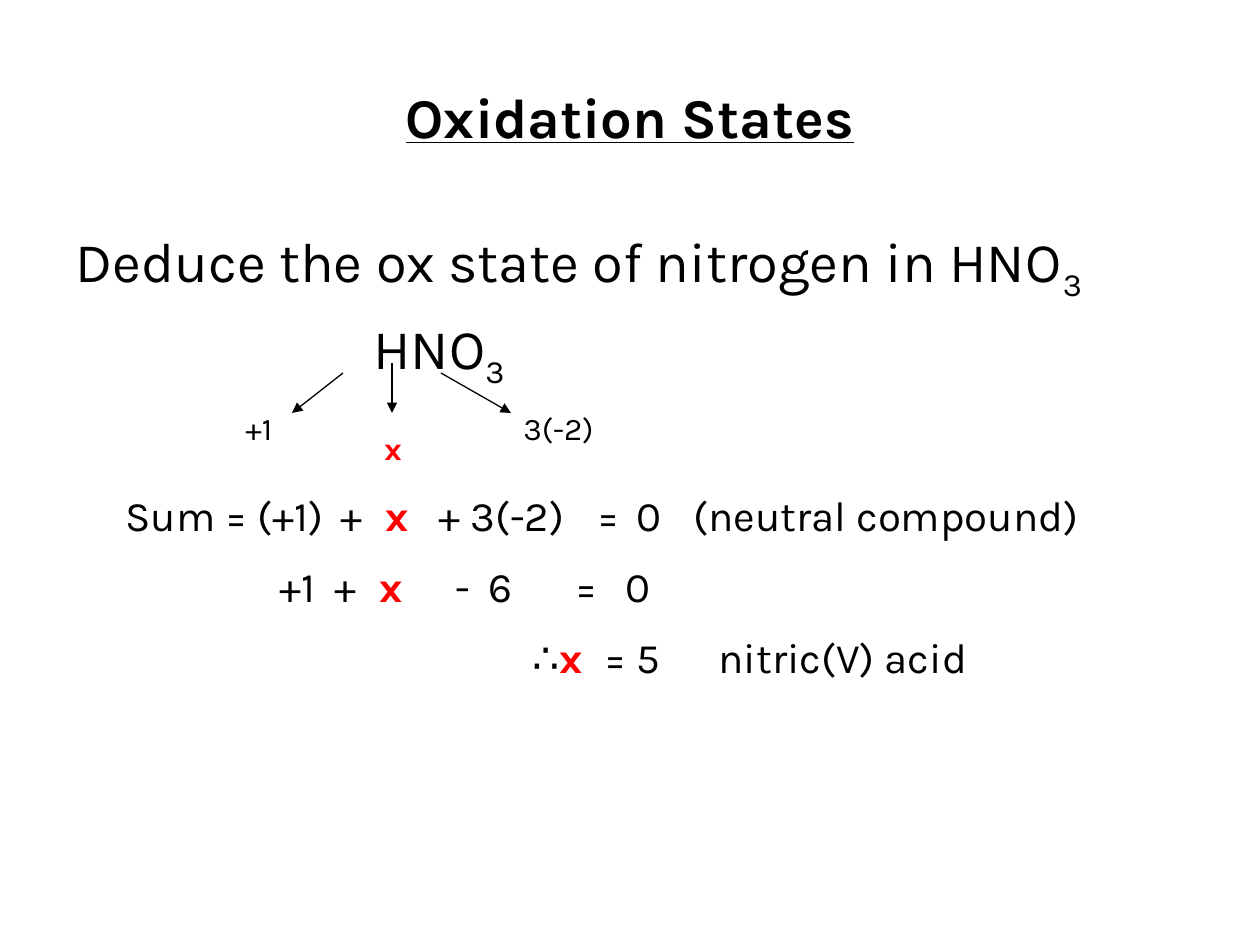
"""Build a slide that works out the oxidation state of nitrogen in nitric acid."""
from dataclasses import dataclass

from lxml import etree
from pptx import Presentation
from pptx import util as u
from pptx.dml.color import RGBColor
from pptx.enum import shapes, text
from pptx.oxml import ns

PX = u.Inches(1) // 126


@dataclass(frozen=True)
class Theme:
    """Colours, font and type sizes of the slide."""

    font: str = "Karla"
    ink: RGBColor = RGBColor(0, 0, 0)
    unknown: RGBColor = RGBColor(255, 0, 0)
    heading: int = 32
    working: int = 24
    label: int = 18


THEME = Theme()


def add_box(page, left, top, width, height, grow=True):
    """Add an empty wrapping text box and return its text frame."""
    box = page.shapes.add_textbox(left * PX, top * PX, width * PX, height * PX)
    frame = box.text_frame
    frame.word_wrap = True
    if grow:
        frame.auto_size = text.MSO_AUTO_SIZE.SHAPE_TO_FIT_TEXT
    return frame


def set_tabs(para, stops):
    """Give a paragraph left tab stops."""
    properties = para._p.get_or_add_pPr()
    tabs = etree.SubElement(properties, ns.qn("a:tabLst"))
    for stop in stops:
        etree.SubElement(tabs, ns.qn("a:tab"), pos=str(stop * PX), algn="l")


def write(para, words, size, before=0.0, stops=()):
    """Write a paragraph, with the unknown x in bold red."""
    para.space_before = u.Pt(size * before)
    if stops:
        set_tabs(para, stops)
    para.font.name = THEME.font
    para.font.size = u.Pt(size)
    para.font.color.rgb = THEME.ink
    for word in words:
        span = para.add_run()
        span.text = word
        if word == "x":
            span.font.bold = True
            span.font.color.rgb = THEME.unknown


def add_title(page, words):
    """Add the centred, underlined title."""
    frame = add_box(page, 63, 38, 1134, 157, grow=False)
    frame.vertical_anchor = text.MSO_ANCHOR.MIDDLE
    para = frame.paragraphs[0]
    para.alignment = text.PP_ALIGN.CENTER
    write(para, [words], THEME.heading)
    para.font.bold = True
    para.font.underline = True


def add_question(page, lines):
    """Add formula lines, each with an indent and a closing subscript."""
    frame = add_box(page, 63, 220, 1134, 624, grow=False)
    for index, (indent, words, subscript) in enumerate(lines):
        para = frame.add_paragraph() if index else frame.paragraphs[0]
        write(para, [words, subscript], THEME.heading, before=0.2)
        para._p.get_or_add_pPr().set("marL", str(indent * PX))
        para.runs[-1]._r.get_or_add_rPr().set("baseline", "-25000")


def add_arrow(page, start, end):
    """Add a thin arrow that points at its end."""
    points = [length * PX for length in (*start, *end)]
    arrow = page.shapes.add_connector(shapes.MSO_CONNECTOR.STRAIGHT, *points)
    arrow.line.color.rgb = THEME.ink
    arrow.line.width = u.Pt(0.75)
    line = arrow.line._get_or_add_ln()
    etree.SubElement(line, ns.qn("a:tailEnd"), type="triangle")
    etree.SubElement(arrow._element.spPr, ns.qn("a:effectLst"))


def add_label(page, words, left, top, width):
    """Add the oxidation number of one atom."""
    frame = add_box(page, left, top, width, 50)
    write(frame.paragraphs[0], [words], THEME.label)


def add_working(page, rows):
    """Add the rows of the sum, lined up on tab stops."""
    frame = add_box(page, 113, 483, 1042, 217)
    for index, (words, stops) in enumerate(rows):
        para = frame.add_paragraph() if index else frame.paragraphs[0]
        write(para, words, THEME.working, before=0.5, stops=stops)


def main():
    """Build the slide and save it."""
    deck = Presentation()
    deck.slide_width, deck.slide_height = 1260 * PX, 945 * PX
    page = deck.slides.add_slide(deck.slide_layouts[6])

    add_title(page, "Oxidation States")
    add_question(page, [
        (0, "Deduce the ox state of nitrogen in HNO", "3"),
        (298, "HNO", "3"),
    ])
    for start, end in [
        ((343, 373), (292, 413)),
        ((392, 363), (392, 413)),
        ((441, 373), (511, 413)),
    ]:
        add_arrow(page, start, end)
    for words, left, top, width in [
        ("+1", 233, 403, 89),
        ("x", 372, 423, 69),
        ("3(-2)", 511, 403, 110),
    ]:
        add_label(page, words, left, top, width)
    add_working(page, [
        (["Sum = (+1)\t+\t", "x", "\t+ 3(-2)\t=\t0\t(neutral compound)"],
         [215, 260, 313, 472, 511, 568]),
        (["\t+1\t+\t", "x", "\t-\t6\t=\t0"],
         [154, 209, 254, 330, 363, 450, 500]),
        (["\t∴", "x", "\t= 5\tnitric(V) acid"],
         [407, 479, 593]),
    ])
    deck.save("out.pptx")


if __name__ == "__main__":
    main()
